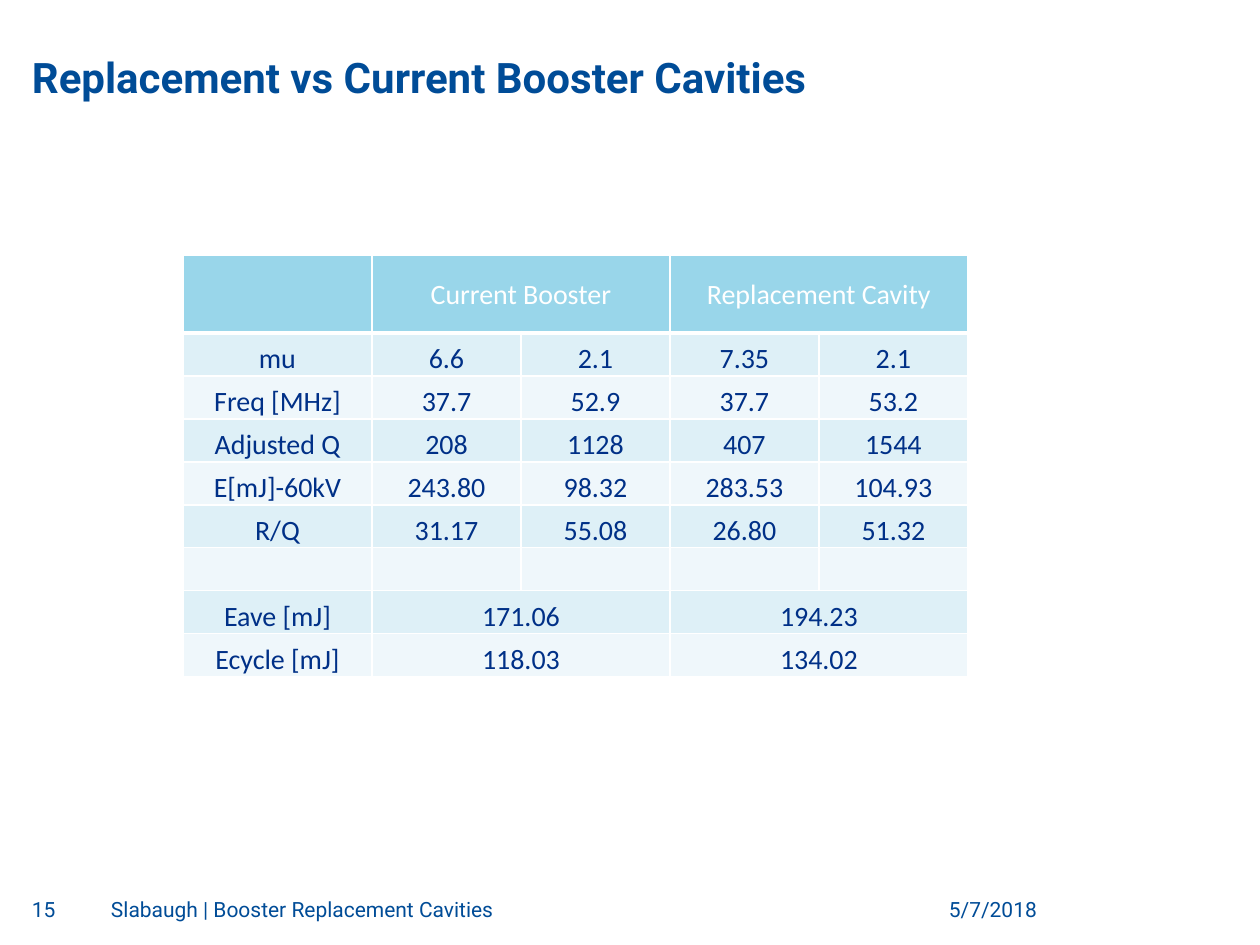
from dataclasses import dataclass

from lxml.etree import SubElement
from pptx import Presentation
from pptx.dml.color import RGBColor
from pptx.enum.text import MSO_ANCHOR, PP_ALIGN
from pptx.oxml.ns import qn
from pptx.slide import Slide
from pptx.table import Table, _Cell
from pptx.util import Emu, Inches, Pt

PX_PER_INCH = 126

WHITE = RGBColor(0xFF, 0xFF, 0xFF)
TITLE_BLUE = RGBColor(0x00, 0x4C, 0x97)
TABLE_NAVY = RGBColor(0x00, 0x30, 0x87)
HEADER_FILL = RGBColor(0x99, 0xD6, 0xEA)
BAND_FILLS = (RGBColor(0xDE, 0xF0, 0xF7), RGBColor(0xEF, 0xF7, 0xFB))

TABLE_LEFT, TABLE_TOP = 183, 255
COLUMN_WIDTHS = [189] + [149] * 4
ROW_HEIGHTS = [78] + [43] * 8
CELL_MARGIN = 1


@dataclass(frozen=True)
class Label:
    text: str
    left: int
    top: int
    width: int
    height: int
    size: int = 12
    bold: bool = False
    align: PP_ALIGN = PP_ALIGN.LEFT
    anchor: MSO_ANCHOR = MSO_ANCHOR.TOP


@dataclass(frozen=True)
class CavityRow:
    name: str
    values: tuple[str, ...]


LABELS = [
    Label("Replacement vs Current Booster Cavities", 32, 14, 1197, 88,
          size=24, bold=True, anchor=MSO_ANCHOR.BOTTOM),
    Label("5/7/2018", 888, 897, 149, 33, align=PP_ALIGN.RIGHT),
    Label("Slabaugh | Booster Replacement Cavities", 111, 897, 741, 33),
    Label("15", 32, 897, 62, 33),
]

ROWS = [
    CavityRow("", ("Current Booster", "Replacement Cavity")),
    CavityRow("mu", ("6.6", "2.1", "7.35", "2.1")),
    CavityRow("Freq [MHz]", ("37.7", "52.9", "37.7", "53.2")),
    CavityRow("Adjusted Q", ("208", "1128", "407", "1544")),
    CavityRow("E[mJ]-60kV", ("243.80", "98.32", "283.53", "104.93")),
    CavityRow("R/Q", ("31.17", "55.08", "26.80", "51.32")),
    CavityRow("", ("", "", "", "")),
    CavityRow("Eave [mJ]", ("171.06", "194.23")),
    CavityRow("Ecycle [mJ]", ("118.03", "134.02")),
]


def px(length: int) -> Emu:
    return Emu(round(length * Inches(1) / PX_PER_INCH))


def add_label(slide: Slide, label: Label) -> None:
    shape = slide.shapes.add_textbox(
        px(label.left), px(label.top), px(label.width), px(label.height))
    frame = shape.text_frame
    frame.word_wrap = True
    frame.vertical_anchor = label.anchor
    frame.margin_left = frame.margin_right = 0
    frame.margin_top = frame.margin_bottom = 0
    paragraph = frame.paragraphs[0]
    paragraph.text = label.text
    paragraph.alignment = label.align
    paragraph.font.name = "Roboto"
    paragraph.font.size = Pt(label.size)
    paragraph.font.bold = label.bold
    paragraph.font.color.rgb = TITLE_BLUE


def add_borders(cell: _Cell, bottom_width: int) -> None:
    properties = cell._tc.get_or_add_tcPr()
    widths = {"a:lnL": 1, "a:lnR": 1, "a:lnT": 1, "a:lnB": bottom_width}
    for side, width in widths.items():
        line = SubElement(properties, qn(side), w=str(Pt(width)))
        fill = SubElement(line, qn("a:solidFill"))
        SubElement(fill, qn("a:srgbClr"), val=str(WHITE))


def style_cell(cell: _Cell, row_index: int) -> None:
    is_header = row_index == 0
    add_borders(cell, 3 if is_header else 1)
    cell.fill.solid()
    cell.fill.fore_color.rgb = (
        HEADER_FILL if is_header else BAND_FILLS[(row_index - 1) % 2])
    cell.vertical_anchor = MSO_ANCHOR.MIDDLE if is_header else MSO_ANCHOR.BOTTOM
    cell.margin_left = cell.margin_right = cell.margin_top = px(CELL_MARGIN)
    cell.margin_bottom = 0
    paragraph = cell.text_frame.paragraphs[0]
    paragraph.alignment = PP_ALIGN.CENTER
    paragraph.font.name = "Calibri"
    paragraph.font.size = Pt(16)
    paragraph.font.bold = False
    paragraph.font.color.rgb = WHITE if is_header else TABLE_NAVY


def fill_row(table: Table, row_index: int, row: CavityRow) -> None:
    span = (len(COLUMN_WIDTHS) - 1) // len(row.values)
    if row.name:
        table.cell(row_index, 0).text = row.name
    for value_index, value in enumerate(row.values):
        column = 1 + value_index * span
        cell = table.cell(row_index, column)
        if value:
            cell.text = value
        if span > 1:
            cell.merge(table.cell(row_index, column + span - 1))
    for column in range(len(COLUMN_WIDTHS)):
        style_cell(table.cell(row_index, column), row_index)


def add_cavity_table(slide: Slide) -> None:
    table = slide.shapes.add_table(
        len(ROWS), len(COLUMN_WIDTHS), px(TABLE_LEFT), px(TABLE_TOP),
        px(sum(COLUMN_WIDTHS)), px(sum(ROW_HEIGHTS))).table
    for column, width in zip(table.columns, COLUMN_WIDTHS):
        column.width = px(width)
    for table_row, height in zip(table.rows, ROW_HEIGHTS):
        table_row.height = px(height)
    for row_index, row in enumerate(ROWS):
        fill_row(table, row_index, row)


def main() -> None:
    presentation = Presentation()
    presentation.slide_width = Inches(10)
    presentation.slide_height = Inches(7.5)
    slide = presentation.slides.add_slide(presentation.slide_layouts[6])
    add_cavity_table(slide)
    for label in LABELS:
        add_label(slide, label)
    presentation.save("out.pptx")


if __name__ == "__main__":
    main()
